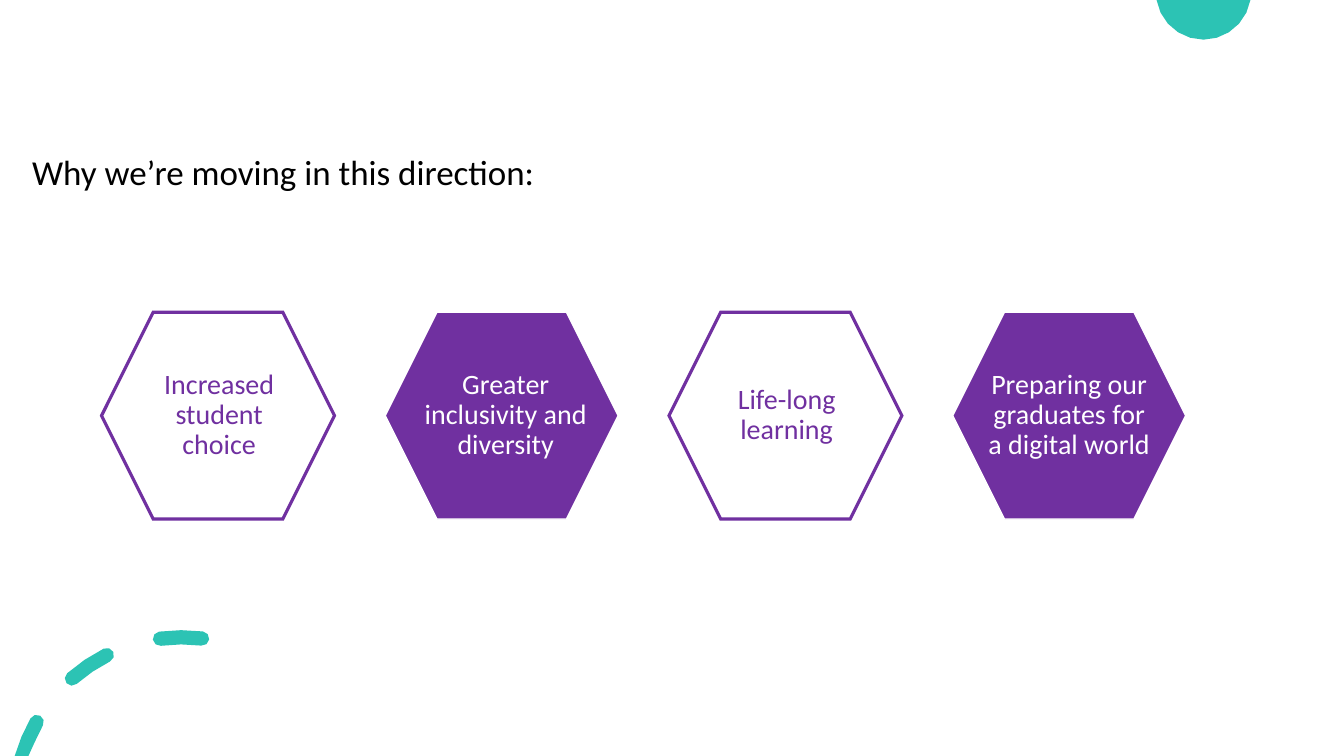
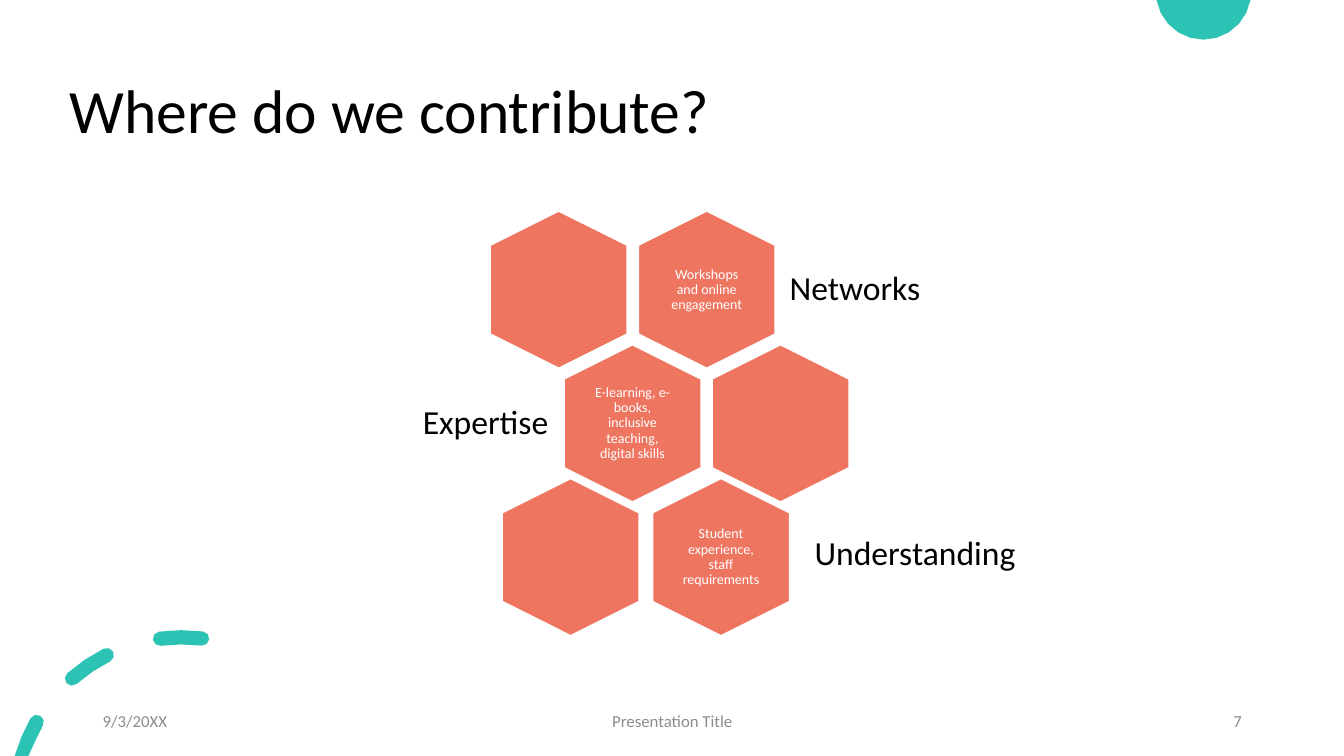
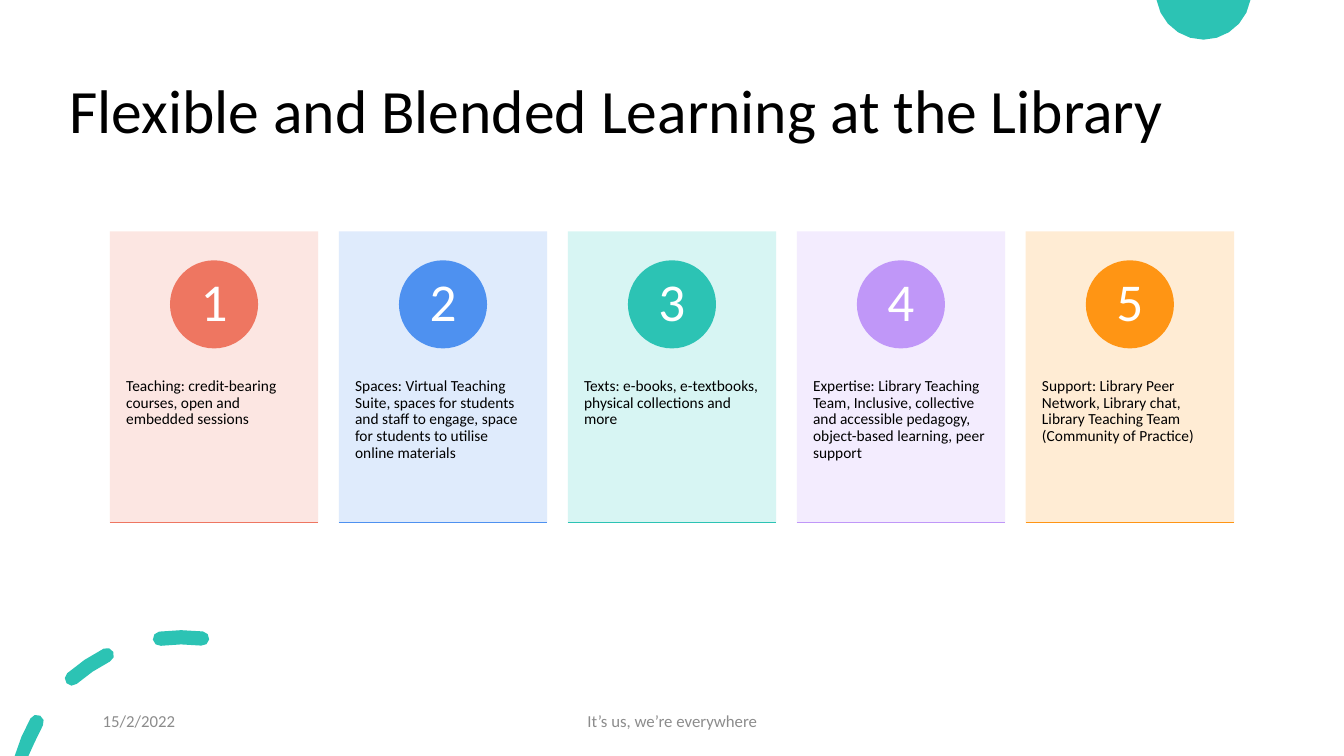
import math
from lxml import etree
from pptx import Presentation
from pptx import util as u
from pptx.dml.color import RGBColor
from pptx.enum import shapes as kinds, text as t
from pptx.oxml import ns

Cm = u.Cm
FONT = "Calibri"
COLOURS = {
    "ink": "000000", "paper": "FFFFFF", "grey": "8C8C8C", "purple": "7030A0",
    "coral": "EE7661", "blue": "4E91F0", "teal": "2CC3B4", "lilac": "C097F8", "orange": "FF9514",
    "pale coral": "FCE4DF", "pale blue": "DCE9FC", "pale teal": "D3F5F2",
    "pale lilac": "F2EAFE", "pale orange": "FFEAD0",
}
LEFT, CENTRE, RIGHT = t.PP_ALIGN.LEFT, t.PP_ALIGN.CENTER, t.PP_ALIGN.RIGHT
SLIDE_W, SLIDE_H = 33.87, 19.05
TITLE_BOX = (1.5, 1.02, 29.21, 3.68)
LEAD_BOX = (0.56, 3.78, 13.51, 1.22)
FOOTER_SLOTS = [(2.34, 7.62, LEFT), (11.23, 11.43, CENTRE), (23.93, 7.62, RIGHT)]

REASONS = [
    ("Increased student choice", 0.03),
    ("Greater inclusivity and diversity", 0.1),
    ("Life-long learning", 0.03),
    ("Preparing our graduates for a digital world", 0),
]
CONTRIBUTIONS = [
    {"centres": (14.08, 17.81), "filled": 1, "detail": "Workshops and online engagement",
     "label": "Networks", "left": 19.65, "width": 4.42, "align": LEFT, "middle": 7.29},
    {"centres": (15.94, 19.67), "filled": 0,
     "detail": "E-learning, e-books, inclusive teaching, digital skills",
     "label": "Expertise", "left": 9.78, "width": 4.29, "align": RIGHT, "middle": 10.67},
    {"centres": (14.38, 18.17), "filled": 1, "detail": "Student experience, staff requirements",
     "label": "Understanding", "left": 20.28, "width": 7.44, "align": LEFT, "middle": 13.97},
]
OFFERS = [
    ("coral", "Teaching: credit-bearing courses, open and embedded sessions"),
    ("blue", "Spaces: Virtual Teaching Suite, spaces for students and staff to engage, "
             "space for students to utilise online materials"),
    ("teal", "Texts: e-books, e-textbooks, physical collections and more"),
    ("lilac", "Expertise: Library Teaching Team, Inclusive, collective and accessible pedagogy, "
              "object-based learning, peer support"),
    ("orange", "Support: Library Peer Network, Library chat, Library Teaching Team "
               "(Community of Practice)"),
]


def rgb(name):
    return RGBColor.from_string(COLOURS[name])


def write(frame, words, size, colour, align=LEFT, anchor=t.MSO_ANCHOR.MIDDLE,
          insets=(0.25, 0.13), spacing=0.9, wrap=True):
    frame.word_wrap = wrap
    frame.auto_size = t.MSO_AUTO_SIZE.NONE
    frame.vertical_anchor = anchor
    frame.margin_left = frame.margin_right = Cm(insets[0])
    frame.margin_top = frame.margin_bottom = Cm(insets[1])
    paragraph = frame.paragraphs[0]
    paragraph.alignment = align
    paragraph.line_spacing = spacing
    run = paragraph.add_run()
    run.text = words
    run.font.name = FONT
    run.font.size = u.Pt(size)
    run.font.color.rgb = rgb(colour)


def add_words(slide, box, *args, **style):
    write(slide.shapes.add_textbox(*map(Cm, box)).text_frame, *args, **style)


def paint(shape, fill, line=None, width=1):
    shape.shadow.inherit = False
    shape.fill.solid()
    shape.fill.fore_color.rgb = rgb(fill)
    if line:
        shape.line.color.rgb = rgb(line)
        shape.line.width = u.Pt(width)
        outline = shape.element.spPr.find(ns.qn("a:ln"))
        etree.SubElement(outline, ns.qn("a:miter"), lim="800000")
    else:
        shape.line.fill.background()


def add_figure(slide, kind, box, fill, line=None, width=1):
    shape = slide.shapes.add_shape(kind, *map(Cm, box))
    paint(shape, fill, line, width)
    return shape


def around(centre, radius, angle):
    turn = math.radians(angle)
    return centre[0] + radius * math.sin(turn), centre[1] - radius * math.cos(turn)


def sweep(centre, radius, start, end, steps):
    return [around(centre, radius, start + (end - start) * i / steps) for i in range(steps + 1)]


def rounded_dash(centre, radius, half, start, end):
    return (sweep(centre, radius + half, start, end, 2)
            + sweep(around(centre, radius, end), half, end, end + 180, 4)[1:-1]
            + sweep(centre, radius - half, end, start, 2)
            + sweep(around(centre, radius, start), half, start + 180, start + 360, 4)[1:-1])


def add_outlines(slide, outlines):
    contours = [[(Cm(x), Cm(min(max(y, 0), SLIDE_H))) for x, y in outline] for outline in outlines]
    builder = slide.shapes.build_freeform(*contours[0][0], scale=1.0)
    for number, contour in enumerate(contours):
        if number:
            builder.move_to(*contour[0])
        builder.add_line_segments(contour[1:], close=True)
    shape = builder.convert_to_shape()
    paint(shape, "teal")
    return shape


def decorate(layout, slide):
    half_disc = sweep((30.33, -0.2), 1.2, 99.6, 260.4, 10)
    dashes = [rounded_dash((4.58, 20.26), 4.2, 0.18, start, end)
              for start, end in [(-74, -60.5), (-41.2, -26.7), (-7.5, 7)]]
    for outlines in ([half_disc], dashes):
        layout.shapes.element.append(add_outlines(slide, outlines).element)


def add_slide(deck, title, box=TITLE_BOX, size=44, wrap=True, footers=()):
    slide = deck.slides.add_slide(deck.slide_layouts[5])
    heading = slide.shapes.title
    heading.left, heading.top, heading.width, heading.height = map(Cm, box)
    write(heading.text_frame, title, size, "ink", wrap=wrap)
    for words, (left, width, align) in zip(footers, FOOTER_SLOTS):
        add_words(slide, (left, 17.65, width, 1.02), words, 12, "grey", align, spacing=1)
    return slide


def add_reasons(slide):
    top, width, height, measure = 7.87, 5.87, 5.21, 4.64
    for i, (reason, shift) in enumerate(REASONS):
        left = 2.56 + 7.15 * i
        fill, line, weight, ink = (("purple", "paper", 1, "paper") if i % 2
                                   else ("paper", "purple", 2.25, "purple"))
        add_figure(slide, kinds.MSO_SHAPE.HEXAGON, (left, top, width, height), fill, line, weight)
        add_words(slide, (left + (width - measure) / 2 + shift, top, measure, height),
                  reason, 20, ink, CENTRE)


def add_contributions(slide):
    width, height = 3.96, 3.45
    for i, row in enumerate(CONTRIBUTIONS):
        middle = 7.3 + 3.37 * i
        for x in row["centres"]:
            hexagon = add_figure(slide, kinds.MSO_SHAPE.HEXAGON,
                                 (x - width / 2, middle - height / 2, width, height),
                                 "coral", "paper")
            hexagon.rotation = 90
        x = row["centres"][row["filled"]]
        add_words(slide, (x - 1.2, middle - 1.37, 2.4, 2.74), row["detail"], 10, "paper",
                  CENTRE, insets=(0.1, 0.1))
        add_words(slide, (row["left"], row["middle"] - 1.2, row["width"], 2.4), row["label"],
                  24, "ink", row["align"], insets=(0.25, 0.25))


def add_offers(slide):
    top, width, height, disc, base_y = 5.83, 5.25, 7.34, 2.22, 13.16
    for i, (colour, words) in enumerate(OFFERS):
        left = 2.77 + 5.77 * i
        card = add_figure(slide, kinds.MSO_SHAPE.RECTANGLE, (left, top, width, height),
                          "pale " + colour)
        tint = card.element.find(".//" + ns.qn("a:srgbClr"))
        etree.SubElement(tint, ns.qn("a:alpha"), val="90000")
        write(card.text_frame, words, 11, "ink", anchor=t.MSO_ANCHOR.TOP, insets=(0.41, 0))
        card.text_frame.margin_top = Cm(3.7)
        number = add_figure(slide, kinds.MSO_SHAPE.OVAL,
                            (left + (width - disc) / 2, 6.56, disc, disc), colour)
        write(number.text_frame, str(i + 1), 38, "paper", CENTRE, insets=(0, 0))
        base = slide.shapes.add_connector(kinds.MSO_CONNECTOR.STRAIGHT, Cm(left), Cm(base_y),
                                          Cm(left + width), Cm(base_y))
        base.line.color.rgb = rgb(colour)
        base.line.width = u.Pt(1)
        etree.SubElement(base.element.spPr, ns.qn("a:effectLst"))


def main():
    deck = Presentation()
    deck.slide_width, deck.slide_height = Cm(SLIDE_W), Cm(SLIDE_H)
    reasons = add_slide(deck, "Why we’re moving in this direction:", LEAD_BOX, 25, wrap=False)
    decorate(deck.slide_layouts[5], reasons)
    add_reasons(reasons)
    add_contributions(add_slide(deck, "Where do we contribute?",
                                footers=("9/3/20XX", "Presentation Title", "7")))
    add_offers(add_slide(deck, "Flexible and Blended Learning at the Library",
                         footers=("15/2/2022", "It’s us, we’re everywhere")))
    deck.save("out.pptx")


if __name__ == "__main__":
    main()
